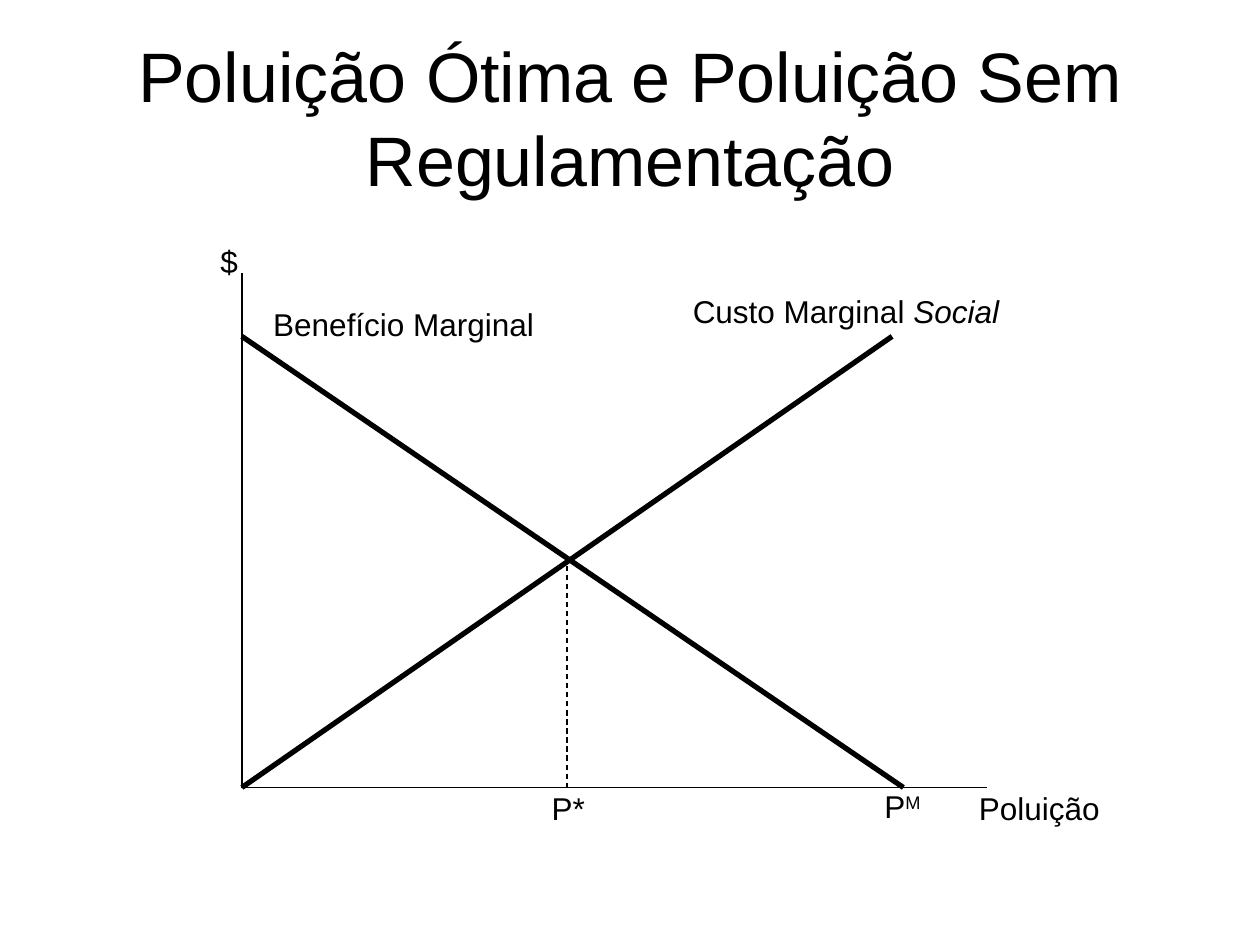
from lxml import etree
from pptx import Presentation
from pptx.dml.color import RGBColor
from pptx.enum.dml import MSO_LINE
from pptx.enum.shapes import MSO_CONNECTOR
from pptx.enum.text import MSO_ANCHOR, MSO_AUTO_SIZE, PP_ALIGN
from pptx.oxml.ns import qn
from pptx.util import Pt

STRAIGHT = MSO_CONNECTOR.STRAIGHT
DASH = MSO_LINE.DASH
MIDDLE = MSO_ANCHOR.MIDDLE
FIXED = MSO_AUTO_SIZE.NONE
GROW = MSO_AUTO_SIZE.SHAPE_TO_FIT_TEXT
LEFT, CENTER = PP_ALIGN.LEFT, PP_ALIGN.CENTER

BLACK = RGBColor(0, 0, 0)
FONT = "Arial"
PX = 9144
LABEL_H = 40


def px(*lengths):
    """Turn px lengths, 100 to the inch, into EMU."""
    return [length * PX for length in lengths]


def write(frame, *pieces, size=18, align=LEFT, italic_last=False, raise_last=False):
    """Write the pieces as runs of one paragraph, with the last one optionally marked."""
    paragraph = frame.paragraphs[0]
    paragraph.alignment = align
    for piece in pieces:
        run = paragraph.add_run()
        run.text = piece
        run.font.name = FONT
        run.font.size = Pt(size)
        run.font.color.rgb = BLACK
    if italic_last:
        run.font.italic = True
    if raise_last:
        run._r.get_or_add_rPr().set("baseline", "30000")


def add_line(shapes, start, end, width=0.75, dash=None):
    """Draw a straight black line between two points."""
    line = shapes.add_connector(STRAIGHT, *px(*start, *end))
    line.line.color.rgb = BLACK
    line.line.width = Pt(width)
    if dash:
        line.line.dash_style = dash
    etree.SubElement(line._element.spPr, qn("a:effectLst"))


def add_label(shapes, left, top, width, *pieces, **style):
    """Place a one-line label."""
    frame = shapes.add_textbox(*px(left, top, width, LABEL_H)).text_frame
    frame.word_wrap = False
    frame.auto_size = GROW
    write(frame, *pieces, **style)


def add_title(slide, left, top, width, height):
    """Place the slide title in its placeholder."""
    title = slide.shapes.title
    title.left, title.top, title.width, title.height = px(left, top, width, height)
    frame = title.text_frame
    frame.word_wrap = True
    frame.auto_size = FIXED
    frame.vertical_anchor = MIDDLE
    write(frame, "Poluição Ótima e Poluição Sem Regulamentação", size=40, align=CENTER)


def add_pollution_diagram(slide, left, top, width, height):
    """Draw the marginal curves and axes in a box whose lower left corner is the origin."""
    shapes = slide.shapes.add_group_shape().shapes
    base = top + height
    origin = (left, base)
    curve_top = top + 50
    optimum = left + 258
    market = left + 525

    add_line(shapes, origin, (left + 516, curve_top), width=3)
    add_label(shapes, left + 348, top + 10, 263, "Custo Marginal ", "Social", italic_last=True)
    add_line(shapes, origin, (left + width, base))
    add_label(shapes, left + width - 16, base - 4, 116, "Poluição")
    add_label(shapes, left - 27, top - 30, 34, "$")
    add_label(shapes, market - 25, base - 5, 51, "P", "M", raise_last=True)
    add_line(shapes, (left, curve_top), (market, base), width=3)
    add_label(shapes, left + 15, top + 20, 229, "Benefício Marginal")
    add_line(shapes, (optimum, top + 225), (optimum, base), dash=DASH)
    add_label(shapes, optimum - 22, base - 4, 47, "P*")
    add_line(shapes, (left, top), origin)


def main():
    """Build and save the slide."""
    deck = Presentation()
    deck.slide_width, deck.slide_height = px(1000, 750)
    slide = deck.slides.add_slide(deck.slide_layouts[5])
    add_title(slide, 50, 30, 900, 125)
    add_pollution_diagram(slide, 192, 217, 591, 408)
    deck.save("out.pptx")


if __name__ == "__main__":
    main()
